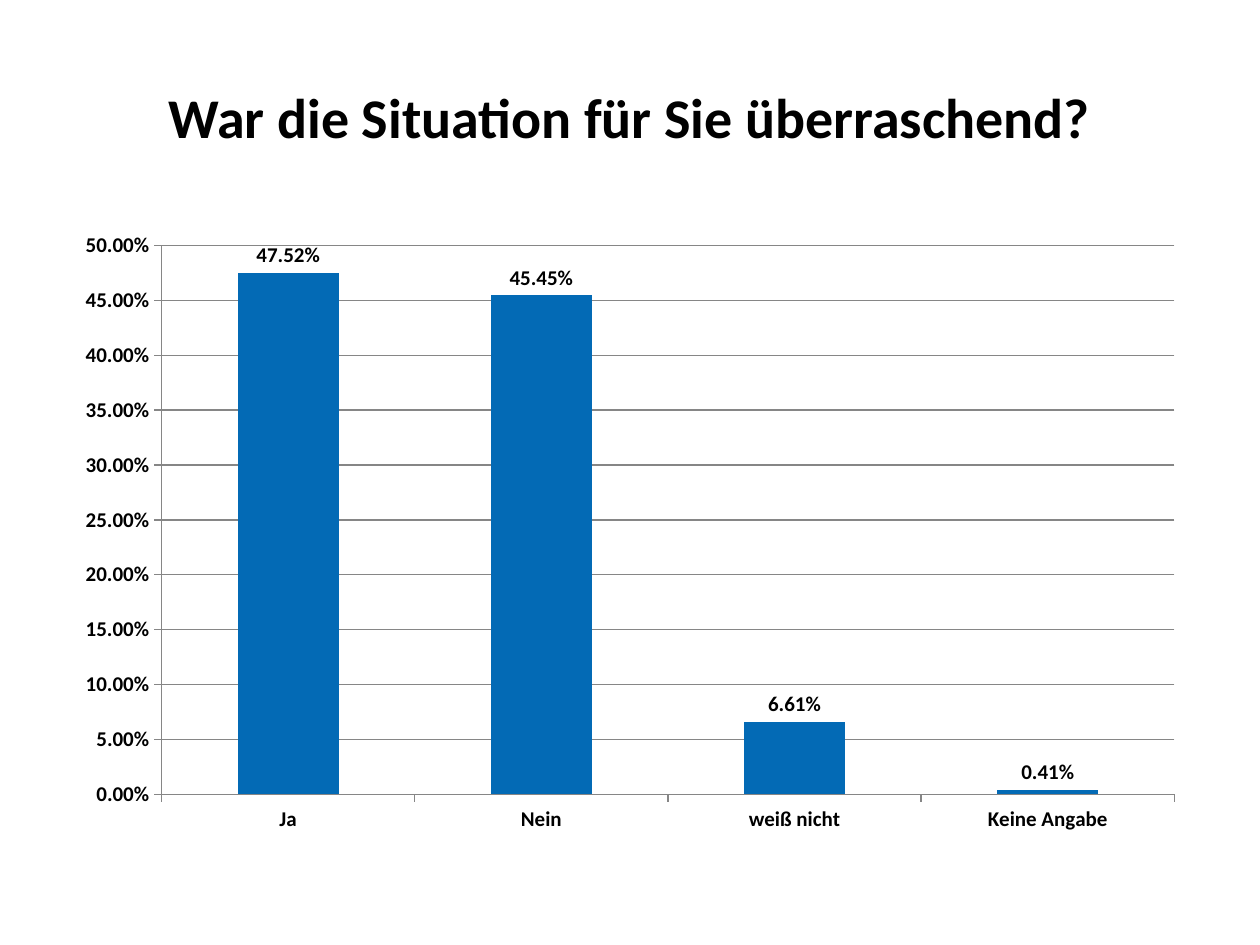
from dataclasses import dataclass

from pptx import Presentation
from pptx.chart.data import CategoryChartData
from pptx.dml.color import RGBColor as RGB
from pptx.enum.chart import XL_CHART_TYPE as ChartType
from pptx.enum.chart import XL_LABEL_POSITION as LabelPos
from pptx.enum.chart import XL_TICK_MARK as Tick
from pptx.enum.text import MSO_ANCHOR as Anchor
from pptx.enum.text import PP_ALIGN as Align
from pptx.util import Pt

# Content
TITLE = "War die Situation für Sie überraschend?"
ANSWERS = [
    ("Ja", 0.4752),
    ("Nein", 0.4545),
    ("weiß nicht", 0.0661),
    ("Keine Angabe", 0.0041),
]
PERCENT = "0.00%"


@dataclass(frozen=True)
class Theme:
    font: str = "Calibri"
    text: RGB = RGB(0x00, 0x00, 0x00)
    bar: RGB = RGB(0x03, 0x6A, 0xB5)
    line: RGB = RGB(0x86, 0x86, 0x86)
    title_size: int = 32
    chart_size: int = 12


THEME = Theme()

# Layout in points
SLIDE_W, SLIDE_H = 720, 540
MARGIN = 36
BODY_W = SLIDE_W - 2 * MARGIN
TITLE_TOP, TITLE_H = 21.6, 90
CHART_TOP, CHART_H = 126, 356.4


def set_font(font, size):
    font.name = THEME.font
    font.size = Pt(size)
    font.bold = True
    font.color.rgb = THEME.text


def add_text(slide, text, *, left, top, width, height, size, align):
    box = slide.shapes.add_textbox(Pt(left), Pt(top), Pt(width), Pt(height))
    tf = box.text_frame
    tf.word_wrap = True
    tf.vertical_anchor = Anchor.MIDDLE
    p = tf.paragraphs[0]
    p.alignment = align
    r = p.add_run()
    r.text = text
    set_font(r.font, size)


def style_line(line):
    line.color.rgb = THEME.line
    line.width = Pt(0.75)


def add_answer_chart(slide):
    data = CategoryChartData(number_format=PERCENT)
    data.categories = [name for name, _ in ANSWERS]
    data.add_series("Series 1", [share for _, share in ANSWERS])
    chart = slide.shapes.add_chart(
        ChartType.COLUMN_CLUSTERED,
        Pt(MARGIN), Pt(CHART_TOP), Pt(BODY_W), Pt(CHART_H), data,
    ).chart
    chart.has_title = False
    chart.has_legend = False
    set_font(chart.font, THEME.chart_size)

    # Axes
    for axis in (chart.category_axis, chart.value_axis):
        axis.major_tick_mark = Tick.OUTSIDE
        axis.minor_tick_mark = Tick.NONE
        style_line(axis.format.line)
    values = chart.value_axis
    values.minimum_scale, values.maximum_scale, values.major_unit = 0, 0.5, 0.05
    values.tick_labels.number_format = PERCENT
    values.tick_labels.number_format_is_linked = False
    values.has_major_gridlines = True
    style_line(values.major_gridlines.format.line)

    # Bars and their labels
    plot = chart.plots[0]
    plot.gap_width = 150
    plot.vary_by_categories = False
    fill = plot.series[0].format.fill
    fill.solid()
    fill.fore_color.rgb = THEME.bar
    plot.has_data_labels = True
    labels = plot.data_labels
    labels.show_value = True
    labels.number_format = PERCENT
    labels.number_format_is_linked = False
    labels.position = LabelPos.OUTSIDE_END
    set_font(labels.font, THEME.chart_size)


def main():
    prs = Presentation()
    prs.slide_width, prs.slide_height = Pt(SLIDE_W), Pt(SLIDE_H)
    slide = prs.slides.add_slide(prs.slide_layouts[6])
    add_text(slide, TITLE, left=MARGIN, top=TITLE_TOP, width=BODY_W,
             height=TITLE_H, size=THEME.title_size, align=Align.CENTER)
    add_answer_chart(slide)
    prs.save("out.pptx")


if __name__ == "__main__":
    main()
